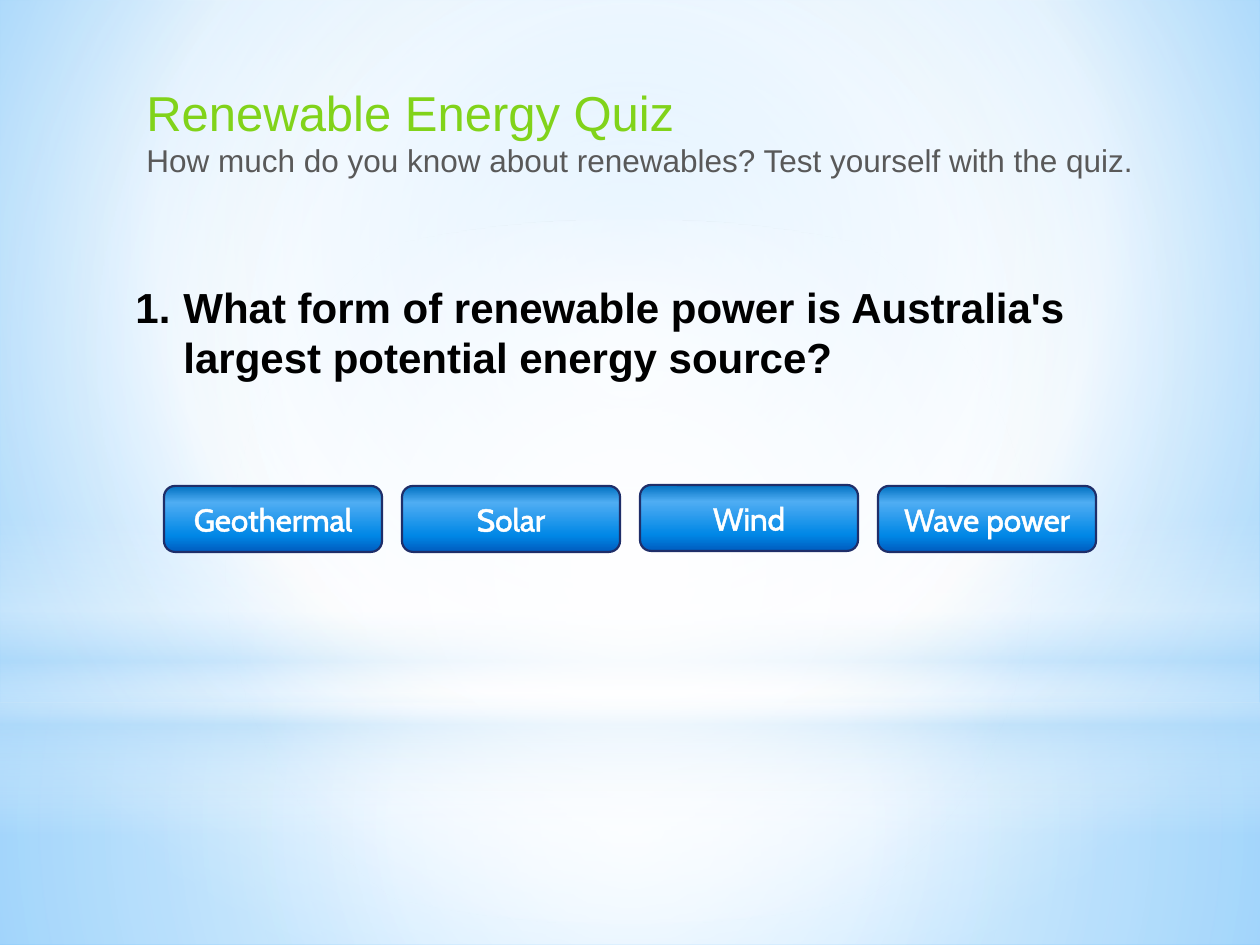
from lxml import etree
from pptx import Presentation
from pptx.dml.color import RGBColor
from pptx.enum.shapes import MSO_SHAPE
from pptx.enum.text import MSO_ANCHOR, MSO_AUTO_SIZE, PP_ALIGN
from pptx.oxml.ns import qn
from pptx.util import Emu, Pt

RECTANGLE, OVAL, ROUNDED = MSO_SHAPE.RECTANGLE, MSO_SHAPE.OVAL, MSO_SHAPE.ROUNDED_RECTANGLE
FIT_TEXT = MSO_AUTO_SIZE.SHAPE_TO_FIT_TEXT
MIDDLE, CENTER = MSO_ANCHOR.MIDDLE, PP_ALIGN.CENTER

WHITE = RGBColor(0xFF, 0xFF, 0xFF)
BLACK = RGBColor(0x00, 0x00, 0x00)
GREEN = RGBColor(0x81, 0xD3, 0x1A)
GRAY = RGBColor(0x59, 0x59, 0x59)
NAVY = RGBColor(0x1F, 0x2E, 0x69)
HAZE = RGBColor(0xB4, 0xDC, 0xFA)
SKY = RGBColor(0x9E, 0xD5, 0xFF)
DEEP_SKY = RGBColor(0x5B, 0xB9, 0xFF)
BUTTON_STOPS = [
    (0, RGBColor(0x00, 0x70, 0xC0), 100),
    (25, RGBColor(0x4F, 0xAD, 0xF3), 100),
    (75, RGBColor(0x00, 0x87, 0xE6), 100),
    (100, RGBColor(0x00, 0x5C, 0xBF), 100),
]
CENTERED = (50, 50, 50, 50)


def px(*lengths):
    return [Emu(round(length * 914400 / 126)) for length in lengths]


def set_gradient(fill, owner, stops, focus=None):
    """Fill with (position, colour, opacity) stops, circular round focus or top to bottom."""
    fill.gradient()
    gradient = owner.find(".//" + qn("a:gradFill"))
    for child in list(gradient):
        gradient.remove(child)
    stop_list = etree.SubElement(gradient, qn("a:gsLst"))
    for position, color, opacity in stops:
        stop = etree.SubElement(stop_list, qn("a:gs"), pos=str(position * 1000))
        rgb = etree.SubElement(stop, qn("a:srgbClr"), val=str(color))
        if opacity < 100:
            etree.SubElement(rgb, qn("a:alpha"), val=str(opacity * 1000))
    if focus:
        circle = etree.SubElement(gradient, qn("a:path"), {"path": "circle"})
        sides = {side: str(share * 1000) for side, share in zip("ltrb", focus)}
        etree.SubElement(circle, qn("a:fillToRect"), sides)
    else:
        etree.SubElement(gradient, qn("a:lin"), ang="5400000", scaled="0")


prs = Presentation()
prs.slide_width, prs.slide_height = px(1260, 945)
slide = prs.slides.add_slide(prs.slide_layouts[6])
shapes = slide.shapes

# Backdrop
set_gradient(slide.background.fill, slide.element,
             [(0, SKY, 100), (60, WHITE, 100), (100, DEEP_SKY, 100)], (20, 10, 20, 60))
backdrop = [
    (RECTANGLE, 703, 242, CENTERED, [(0, WHITE, 91), (37, WHITE, 76), (100, HAZE, 79)]),
    (RECTANGLE, 0, 703, CENTERED, [(0, WHITE, 89), (48, WHITE, 62), (100, HAZE, 79)]),
    (RECTANGLE, 519, 315, None, [(0, WHITE, 0), (29, WHITE, 30), (45, HAZE, 40),
                                 (55, WHITE, 26), (65, HAZE, 60), (100, WHITE, 0)]),
    (OVAL, 220, 703, CENTERED, [(0, WHITE, 100), (56, WHITE, 0)]),
]
for preset, top, height, focus, stops in backdrop:
    glow = shapes.add_shape(preset, *px(0, top, 1260, height))
    glow.shadow.inherit = False
    glow.line.fill.background()
    set_gradient(glow.fill, glow.element, stops, focus)

# Question
question_frame = shapes.add_textbox(*px(123, 275, 1042, 190)).text_frame
question_frame.word_wrap = True
question_frame.auto_size = FIT_TEXT
question_frame.text = "What form of renewable power is Australia's largest potential energy source?"
question = question_frame.paragraphs[0]
question.font.name, question.font.size, question.font.bold = "Arial", Pt(24), True
question.runs[0].font.name = "Arial"
question.runs[0].font.size = Pt(24)
question.runs[0].font.bold = True
question.runs[0].font.color.rgb = BLACK
numbering = question._p.get_or_add_pPr()
indent = px(48)[0]
numbering.set("marL", str(indent))
numbering.set("indent", str(-indent))
numbering.insert(0, etree.Element(qn("a:buFont"), typeface="+mj-lt"))
numbering.insert(1, etree.Element(qn("a:buAutoNum"), type="arabicPeriod"))

# Heading
heading_frame = shapes.add_textbox(*px(134, 76, 1052, 111)).text_frame
heading_frame.word_wrap = True
heading_frame.auto_size = FIT_TEXT
heading_frame.text = ("Renewable Energy Quiz\n"
                      "How much do you know about renewables? Test yourself with the quiz.")
for line, size, color in zip(heading_frame.paragraphs, (28, 18), (GREEN, GRAY)):
    font = line.runs[0].font
    font.name, font.size = "Arial", Pt(size)
    font.color.rgb = color

# Answer buttons
answers = [("Geothermal", 486), ("Solar", 486), ("Wind", 485), ("Wave power", 486)]
for column, (answer, top) in enumerate(answers):
    button = shapes.add_shape(ROUNDED, *px(164 + 238 * column, top, 218, 66))
    button.shadow.inherit = False
    set_gradient(button.fill, button.element, BUTTON_STOPS)
    button.line.color.rgb = NAVY
    button.line.width = Pt(1.25)
    button.text_frame.vertical_anchor = MIDDLE
    button.text_frame.text = answer
    label = button.text_frame.paragraphs[0]
    label.alignment = CENTER
    font = label.runs[0].font
    font.name, font.size = "Cabin", Pt(18)
    font.color.rgb = WHITE
    outline = etree.Element(qn("a:ln"), w=str(Pt(1.45)))
    outline_fill = etree.SubElement(outline, qn("a:solidFill"))
    etree.SubElement(outline_fill, qn("a:srgbClr"), val=str(WHITE))
    label.runs[0]._r.get_or_add_rPr().insert(0, outline)

prs.save("out.pptx")
